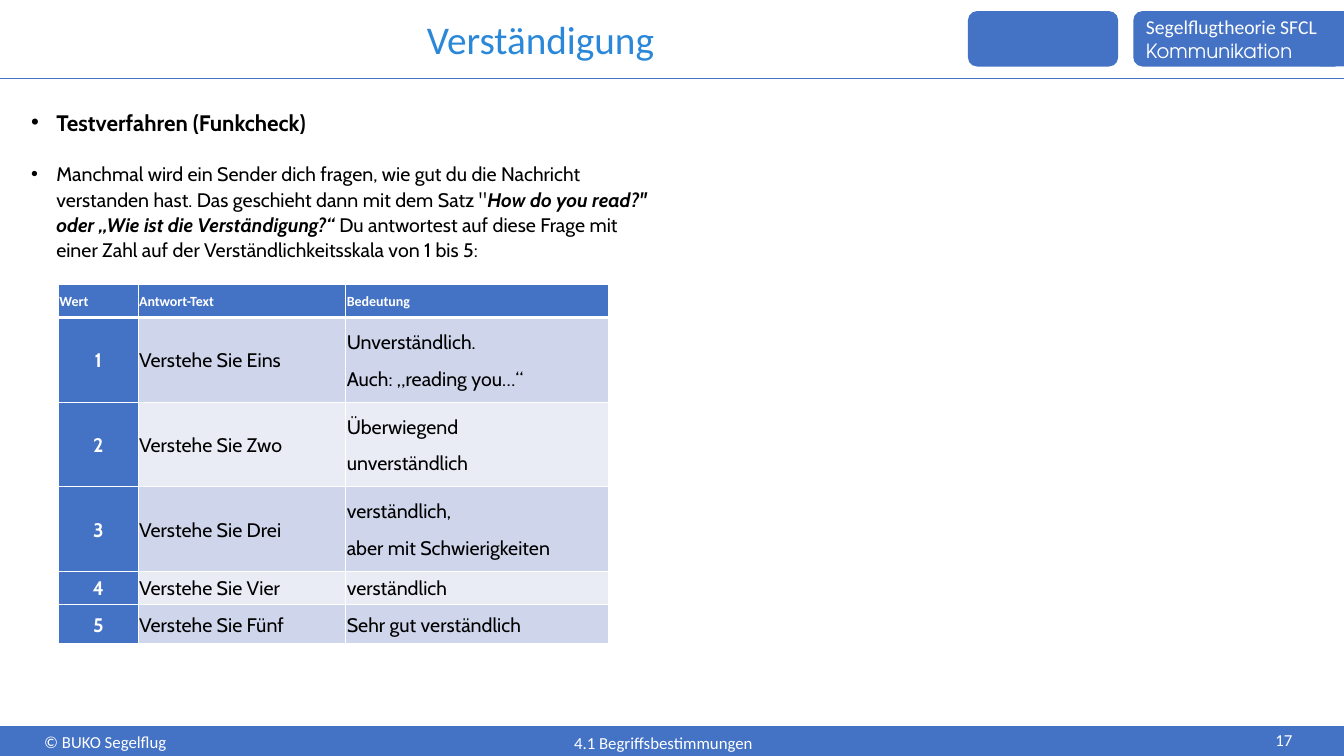
from lxml.etree import SubElement
from pptx import Presentation
from pptx.dml.color import RGBColor
from pptx.enum.shapes import MSO_CONNECTOR, MSO_SHAPE
from pptx.enum.text import MSO_ANCHOR, PP_ALIGN
from pptx.oxml import parse_xml
from pptx.oxml.ns import nsdecls, qn
from pptx.util import Inches, Pt

COLORS = {"blue": "4472C4", "title": "2B88D9", "white": "FFFFFF", "black": "000000",
          "odd": "CFD5EA", "even": "E9EBF5"}
HEADER = ["Wert", "Antwort-Text", "Bedeutung"]
SCALE = [
    ("Eins", ["Unverständlich.", "Auch: „reading you…“"]),
    ("Zwo", ["Überwiegend", "unverständlich"]),
    ("Drei", ["verständlich,", "aber mit Schwierigkeiten"]),
    ("Vier", ["verständlich"]),
    ("Fünf", ["Sehr gut verständlich"]),
]


class SlideBuilder:
    """Draws styled elements on the current slide."""

    def __init__(self, s):
        self.s = s

    def color(self, name):
        return RGBColor.from_string(COLORS[name])

    def run(self, p, text, size, color="white", font="Calibri", bold=False, italic=False):
        r = p.add_run()
        r.text = text
        r.font.size, r.font.name = Pt(size), font
        r.font.bold, r.font.italic = bold, italic
        r.font.color.rgb = self.color(color)

    def paragraph(self, tf, first, align=PP_ALIGN.LEFT, spacing=1.0, before=0, after=0):
        p = tf.paragraphs[0] if first else tf.add_paragraph()
        p.alignment, p.line_spacing = align, spacing
        p.space_before, p.space_after = Pt(0 if first else before), Pt(after)
        return p

    def bullet(self, p):
        pPr = p._p.get_or_add_pPr()
        pPr.set("marL", str(Inches(0.25)))
        pPr.set("indent", str(Inches(-0.25)))
        SubElement(pPr, qn("a:buFont")).set("typeface", "Arial")
        SubElement(pPr, qn("a:buChar")).set("char", "•")

    def box(self, x, y, w, h, anchor=MSO_ANCHOR.TOP):
        sp = self.s.shapes.add_textbox(Inches(x), Inches(y), Inches(w), Inches(h))
        tf = sp.text_frame
        tf.word_wrap, tf.vertical_anchor = True, anchor
        return tf

    def label(self, x, y, w, h, text, size, color="white", align=PP_ALIGN.LEFT,
              spacing=1.0, anchor=MSO_ANCHOR.TOP):
        tf = self.box(x, y, w, h, anchor)
        self.run(self.paragraph(tf, True, align, spacing), text, size, color)

    def shape(self, kind, x, y, w, h):
        sp = self.s.shapes.add_shape(kind, Inches(x), Inches(y), Inches(w), Inches(h))
        sp.shadow.inherit = False
        sp.fill.solid()
        sp.fill.fore_color.rgb = self.color("blue")
        sp.line.fill.background()
        sp.text_frame.vertical_anchor = MSO_ANCHOR.MIDDLE
        return sp.text_frame

    def rule(self, y):
        c = self.s.shapes.add_connector(MSO_CONNECTOR.STRAIGHT, 0, Inches(y), Inches(13.33), Inches(y))
        c.line.color.rgb = self.color("blue")
        c.line.width = Pt(1.25)
        SubElement(c._element.spPr, qn("a:effectLst"))

    def table(self, x, y, widths, heights):
        frame = self.s.shapes.add_table(len(heights), len(widths), Inches(x), Inches(y),
                                        Inches(sum(widths)), Inches(sum(heights)))
        tbl = frame.table
        tbl.first_row = tbl.horz_banding = False
        for col, w in zip(tbl.columns, widths):
            col.width = Inches(w)
        for row, h in zip(tbl.rows, heights):
            row.height = Inches(h)
        return tbl

    def cell(self, tbl, row, col, lines, fill, size=14, font="Cabin", color="black",
             bold=False, align=PP_ALIGN.LEFT):
        cell = tbl.cell(row, col)
        cell.margin_left = cell.margin_right = Inches(0.01)
        cell.margin_top = cell.margin_bottom = Inches(0.01)
        cell.vertical_anchor = MSO_ANCHOR.MIDDLE
        cell.fill.solid()
        cell.fill.fore_color.rgb = self.color(fill)
        for i, text in enumerate(lines):
            p = self.paragraph(cell.text_frame, i == 0, align, 1.07, after=8)
            self.run(p, text, size, color, font, bold)
        thick = {(0, "B"), (1, "T")}
        for i, side in enumerate("LRTB"):
            width = Pt(3 if (row, side) in thick else 1)
            cell._tc.get_or_add_tcPr().insert(i, parse_xml(
                f'<a:ln{side} {nsdecls("a")} w="{width}"><a:solidFill>'
                f'<a:srgbClr val="{COLORS["white"]}"/></a:solidFill></a:ln{side}>'))


def main():
    prs = Presentation()
    prs.slide_width, prs.slide_height = Inches(13.33), Inches(7.5)
    b = SlideBuilder(prs.slides.add_slide(prs.slide_layouts[6]))

    b.shape(MSO_SHAPE.RECTANGLE, 0, 7.21, 13.33, 0.31)
    b.label(0.34, 7.21, 1.42, 0.31, "© BUKO Segelflug", 12)
    b.rule(7.21)
    b.shape(MSO_SHAPE.ROUNDED_RECTANGLE, 9.6, 0.11, 1.49, 0.55)
    tf = b.shape(MSO_SHAPE.ROUNDED_RECTANGLE, 11.24, 0.11, 2.09, 0.55)
    b.run(b.paragraph(tf, True), "Segelflugtheorie SFCL", 14)
    b.run(b.paragraph(tf, False), "Kommunikation", 14, font="TeX Gyre Adventor")
    b.rule(0.78)
    b.shape(MSO_SHAPE.RECTANGLE, 13.09, 0.11, 0.25, 0.55)

    b.label(1.04, 0.14, 8.64, 0.55, "Verständigung", 28, "title", PP_ALIGN.CENTER, 0.9,
            MSO_ANCHOR.MIDDLE)

    tf = b.box(0.21, 1.01, 6.38, 5.99)
    p = b.paragraph(tf, True, spacing=1.07, after=8)
    b.bullet(p)
    b.run(p, "Testverfahren (Funkcheck)", 16, "black", "Cabin", True)
    p = b.paragraph(tf, False, spacing=1.07, before=10, after=8)
    b.bullet(p)
    for text, strong in [
        ("Manchmal wird ein Sender dich fragen, wie gut du die Nachricht verstanden hast. "
         "Das geschieht dann mit dem Satz \"", False),
        ("How do you read?\" oder „Wie ist die Verständigung?“ ", True),
        ("Du antwortest auf diese Frage mit einer Zahl auf der Verständlichkeitsskala "
         "von 1 bis 5:", False),
    ]:
        b.run(p, text, 14, "black", "Cabin", strong, strong)

    tbl = b.table(0.58, 2.82, [0.79, 2.06, 2.61], [0.33, 0.84, 0.84, 0.84, 0.33, 0.39])
    for col, text in enumerate(HEADER):
        b.cell(tbl, 0, col, [text], "blue", 10, "Calibri", "white", True)
    for row, (word, meaning) in enumerate(SCALE, 1):
        band = "odd" if row % 2 else "even"
        b.cell(tbl, row, 0, [str(row)], "blue", color="white", bold=True, align=PP_ALIGN.CENTER)
        b.cell(tbl, row, 1, [f"Verstehe Sie {word}"], band)
        b.cell(tbl, row, 2, meaning, band)

    b.label(12.55, 7.19, 0.59, 0.31, "17", 12)
    b.label(1.66, 7.24, 9.84, 0.31, "4.1 Begriffsbestimmungen", 12, align=PP_ALIGN.CENTER, spacing=0.9)
    prs.save("out.pptx")


if __name__ == "__main__":
    main()
